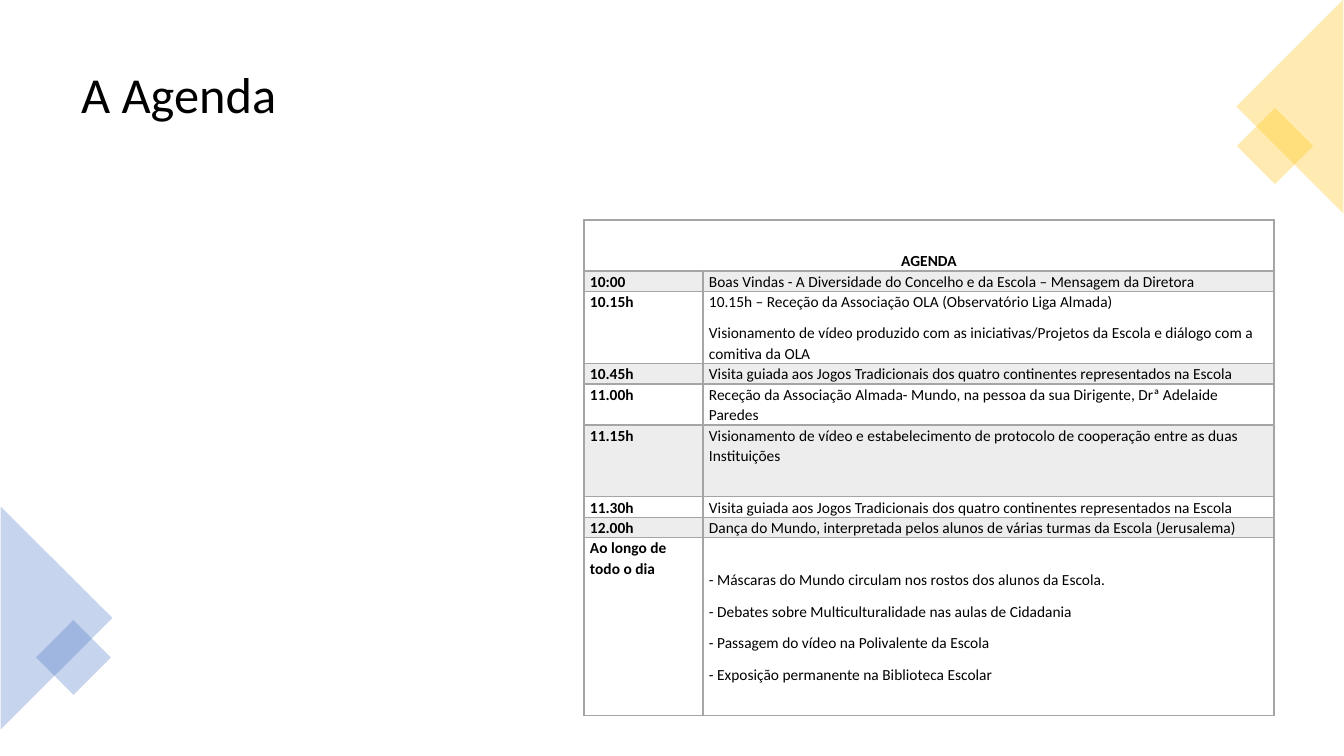
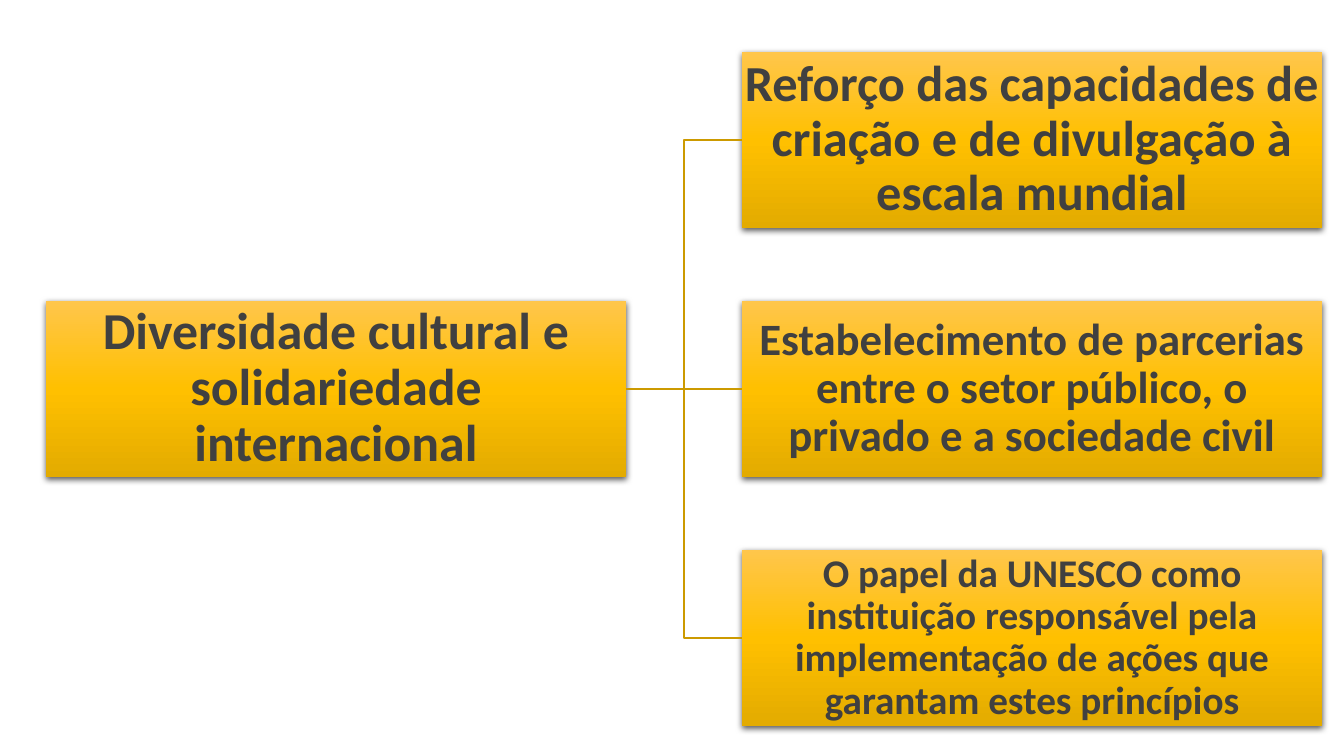
from lxml.etree import SubElement
from pptx import Presentation
from pptx.dml.color import RGBColor
from pptx.enum.shapes import MSO_CONNECTOR as Connector, MSO_SHAPE as Shape
from pptx.enum.text import MSO_ANCHOR as Anchor, PP_ALIGN as Align
from pptx.oxml import parse_xml
from pptx.oxml.ns import nsdecls, qn
from pptx.util import Pt

# Shared style
SCALE = 914400 / 100.8  # EMU in one px
FONT = "Calibri"
COLORS = {
    "text": "000000", "box_text": "404040", "border": "A5A5A5", "band": "EDEDED",
    "blue": "4472C4", "yellow": "FFC000", "link": "CC9A00", "shadow": "000000",
}
BOX_GRADIENT = [(0, "FFC64B"), (50, "FFC000"), (100, "E3AB00")]

# Slide 1: agenda
AGENDA_TITLE = "A Agenda"
AGENDA_HEADER = "AGENDA"
HEADER_HEIGHT = 51
AGENDA = [  # time, lines, row height, space above the lines
    ("10:00", ["Boas Vindas - A Diversidade do Concelho e da Escola – Mensagem da Diretora"], 20, 0),
    ("10.15h", ["10.15h – Receção da Associação OLA (Observatório Liga Almada)",
                "Visionamento de vídeo produzido com as iniciativas/Projetos da Escola "
                "e diálogo com a comitiva da OLA"], 72, 0),
    ("10.45h", ["Visita guiada aos Jogos Tradicionais dos quatro continentes "
                "representados na Escola"], 20, 0),
    ("11.00h", ["Receção da Associação Almada- Mundo, na pessoa da sua Dirigente, "
                "Drª Adelaide Paredes"], 41, 0),
    ("11.15h", ["Visionamento de vídeo e estabelecimento de protocolo de cooperação "
                "entre as duas Instituições"], 72, 0),
    ("11.30h", ["Visita guiada aos Jogos Tradicionais dos quatro continentes "
                "representados na Escola"], 20, 0),
    ("12.00h", ["Dança do Mundo, interpretada pelos alunos de várias turmas da Escola "
                "(Jerusalema)"], 20, 0),
    ("Ao longo de todo o dia", ["- Máscaras do Mundo circulam nos rostos dos alunos da Escola.",
                                "- Debates sobre Multiculturalidade nas aulas de Cidadania",
                                "- Passagem do vídeo na Polivalente da Escola",
                                "- Exposição permanente na Biblioteca Escolar"], 178, 32),
]
TABLE_LEFT, TABLE_TOP = 584, 220
COLUMNS = [119, 571]
CORNERS = [  # preset, left, top, width, height, rotation, colour
    (Shape.ISOSCELES_TRIANGLE, -55, 562, 223, 112, 90, "blue"),
    (Shape.RECTANGLE, 47, 631, 53, 53, 45, "blue"),
    (Shape.RECTANGLE, 1248, 119, 54, 54, 45, "yellow"),
    (Shape.ISOSCELES_TRIANGLE, 1183, 53, 214, 107, 270, "yellow"),
]

# Slide 2: one idea and its branches, each with its text size
ROOT = ("Diversidade cultural e solidariedade internacional", 37)
BRANCHES = [
    ("Reforço das capacidades de criação e de divulgação à escala mundial", 36),
    ("Estabelecimento de parcerias entre o setor público, o privado e a sociedade civil", 32),
    ("O papel da UNESCO como instituição responsável pela implementação de ações "
     "que garantam estes princípios", 28),
]
BOX_WIDTH, BOX_HEIGHT = 580, 176
ROOT_LEFT, BRANCH_LEFT = 46, 742
BRANCH_TOP, BRANCH_STEP = 52, 249


def px(value):
    return round(value * SCALE)


def rgb(name):
    return RGBColor.from_string(COLORS[name])


def format_text(paragraph, size, color="text", bold=False, align=Align.LEFT, spacing=0.9):
    paragraph.alignment = align
    paragraph.line_spacing = spacing
    for run in paragraph.runs:
        run.font.name = FONT
        run.font.size = Pt(size)
        run.font.bold = bold
        run.font.color.rgb = rgb(color)


def set_margins(target, side, top=0, bottom=0):
    target.margin_left = target.margin_right = px(side)
    target.margin_top, target.margin_bottom = px(top), px(bottom)


def add_corner(slide, preset, left, top, width, height, rotation, color):
    shape = slide.shapes.add_shape(preset, px(left), px(top), px(width), px(height))
    shape.rotation = rotation
    shape.shadow.inherit = False
    shape.line.fill.background()
    shape.fill.solid()
    shape.fill.fore_color.rgb = rgb(color)
    fill_color = shape.fill._xPr.find(qn("a:solidFill"))[0]
    SubElement(fill_color, qn("a:alpha"), val="30000")


def set_borders(cell, **widths):
    properties = cell._tc.get_or_add_tcPr()
    for side in "LRTB":
        properties.append(parse_xml(
            f'<a:ln{side} {nsdecls("a")} w="{Pt(widths.get(side, 1))}"><a:solidFill>'
            f'<a:srgbClr val="{COLORS["border"]}"/></a:solidFill></a:ln{side}>'))


def fill_cell(cell, lines, bold, banded=False, top=0, align=Align.LEFT, **borders):
    set_borders(cell, **borders)
    set_margins(cell, 6, top)
    if banded:
        cell.fill.solid()
        cell.fill.fore_color.rgb = rgb("band")
    else:
        cell.fill.background()
    cell.text_frame.text = "\n".join(lines)
    for paragraph in cell.text_frame.paragraphs:
        format_text(paragraph, 11, bold=bold, align=align, spacing=1.07)
        paragraph.space_after = Pt(8)


def add_agenda_table(slide):
    heights = [HEADER_HEIGHT] + [row[2] for row in AGENDA]
    table = slide.shapes.add_table(
        len(heights), len(COLUMNS), px(TABLE_LEFT), px(TABLE_TOP),
        px(sum(COLUMNS)), px(sum(heights))).table
    table.first_row = table.horz_banding = False
    for column, width in zip(table.columns, COLUMNS):
        column.width = px(width)
    for row, height in zip(table.rows, heights):
        row.height = px(height)

    header = table.cell(0, 0)
    header.merge(table.cell(0, 1))
    fill_cell(header, [AGENDA_HEADER], True, align=Align.CENTER, B=2)
    set_borders(table.cell(0, 1), B=2)
    header.vertical_anchor = Anchor.BOTTOM
    for index, (time, lines, _, top) in enumerate(AGENDA, start=1):
        style = {"banded": index % 2 == 1, "T": 2 if index == 1 else 1}
        fill_cell(table.cell(index, 0), [time], True, **style)
        fill_cell(table.cell(index, 1), lines, False, top=top, **style)


def add_box(slide, left, top, text, size):
    shape = slide.shapes.add_shape(
        Shape.RECTANGLE, px(left), px(top), px(BOX_WIDTH), px(BOX_HEIGHT))
    shape.line.fill.background()
    shape.shadow.inherit = False
    properties = shape._element.spPr
    # Gradient from top to bottom, with a soft shadow below
    stops = "".join(f'<a:gs pos="{place * 1000}"><a:srgbClr val="{color}"/></a:gs>'
                    for place, color in BOX_GRADIENT)
    properties.find(qn("a:prstGeom")).addnext(parse_xml(
        f'<a:gradFill {nsdecls("a")} rotWithShape="1"><a:gsLst>{stops}</a:gsLst>'
        f'<a:lin ang="5400000" scaled="0"/></a:gradFill>'))
    properties.find(qn("a:effectLst")).append(parse_xml(
        f'<a:outerShdw {nsdecls("a")} blurRad="{Pt(4.5)}" dist="{Pt(1.5)}" dir="5400000" '
        f'algn="ctr" rotWithShape="0"><a:srgbClr val="{COLORS["shadow"]}">'
        f'<a:alpha val="63000"/></a:srgbClr></a:outerShdw>'))
    frame = shape.text_frame
    frame.word_wrap = True
    frame.vertical_anchor = Anchor.MIDDLE
    set_margins(frame, 2, 2, 2)
    frame.text = text
    format_text(frame.paragraphs[0], size, "box_text", bold=True, align=Align.CENTER)
    return shape


def add_link(slide, root, branch):
    kind = Connector.STRAIGHT if root.top == branch.top else Connector.ELBOW
    link = slide.shapes.add_connector(kind, 0, 0, 0, 0)
    link.begin_connect(root, 3)
    link.end_connect(branch, 1)
    link.line.color.rgb = rgb("link")
    link.line.width = Pt(1)
    SubElement(link._element.spPr, qn("a:effectLst"))


def build_agenda(presentation):
    slide = presentation.slides.add_slide(presentation.slide_layouts[5])
    title = slide.shapes.title
    title.left, title.top, title.width, title.height = map(px, (71, 35, 1203, 125))
    title.text_frame.text = AGENDA_TITLE
    title.text_frame.vertical_anchor = Anchor.MIDDLE
    format_text(title.text_frame.paragraphs[0], 36)
    for corner in CORNERS:
        add_corner(slide, *corner)
    add_agenda_table(slide)


def build_diagram(presentation):
    slide = presentation.slides.add_slide(presentation.slide_layouts[6])
    middle = BRANCH_TOP + BRANCH_STEP * (len(BRANCHES) - 1) // 2
    root = add_box(slide, ROOT_LEFT, middle, *ROOT)
    for index, branch in enumerate(BRANCHES):
        box = add_box(slide, BRANCH_LEFT, BRANCH_TOP + index * BRANCH_STEP, *branch)
        add_link(slide, root, box)


def main():
    presentation = Presentation()
    presentation.slide_width, presentation.slide_height = px(1344), px(756)
    build_agenda(presentation)
    build_diagram(presentation)
    presentation.save("out.pptx")


if __name__ == "__main__":
    main()
